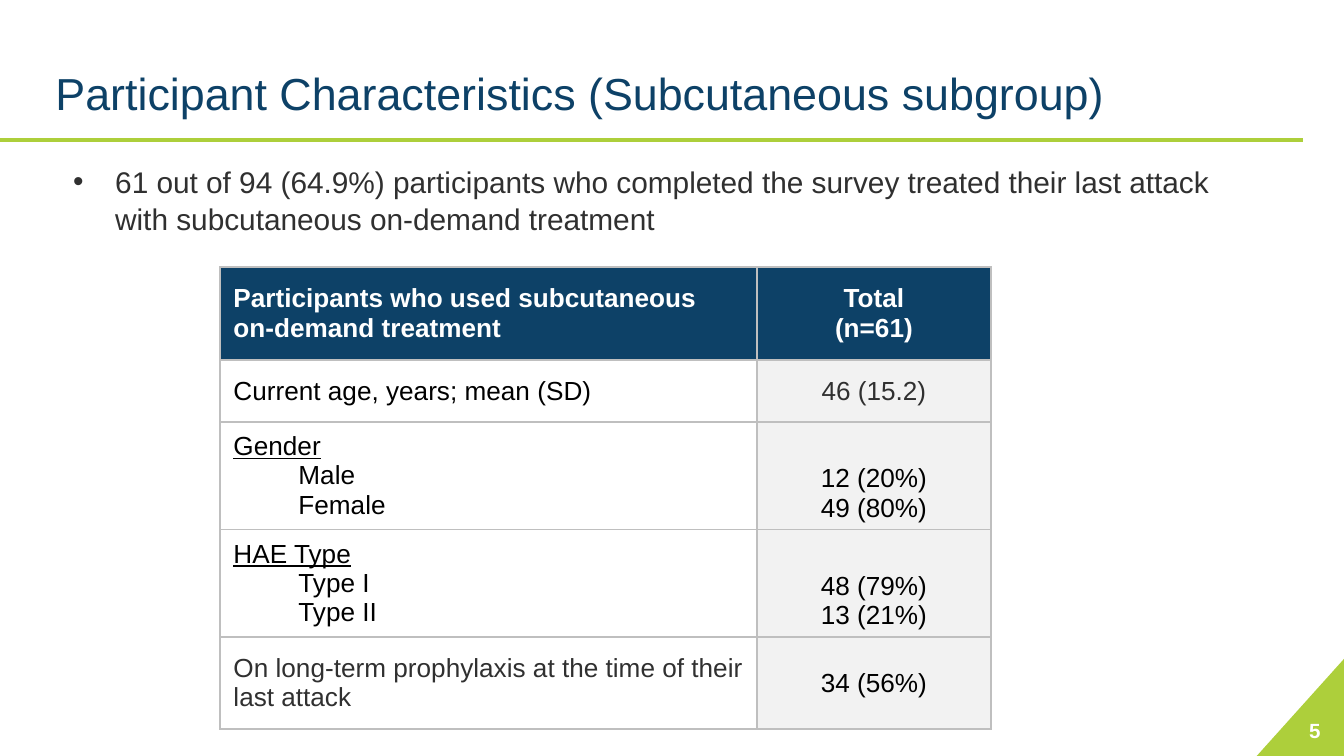
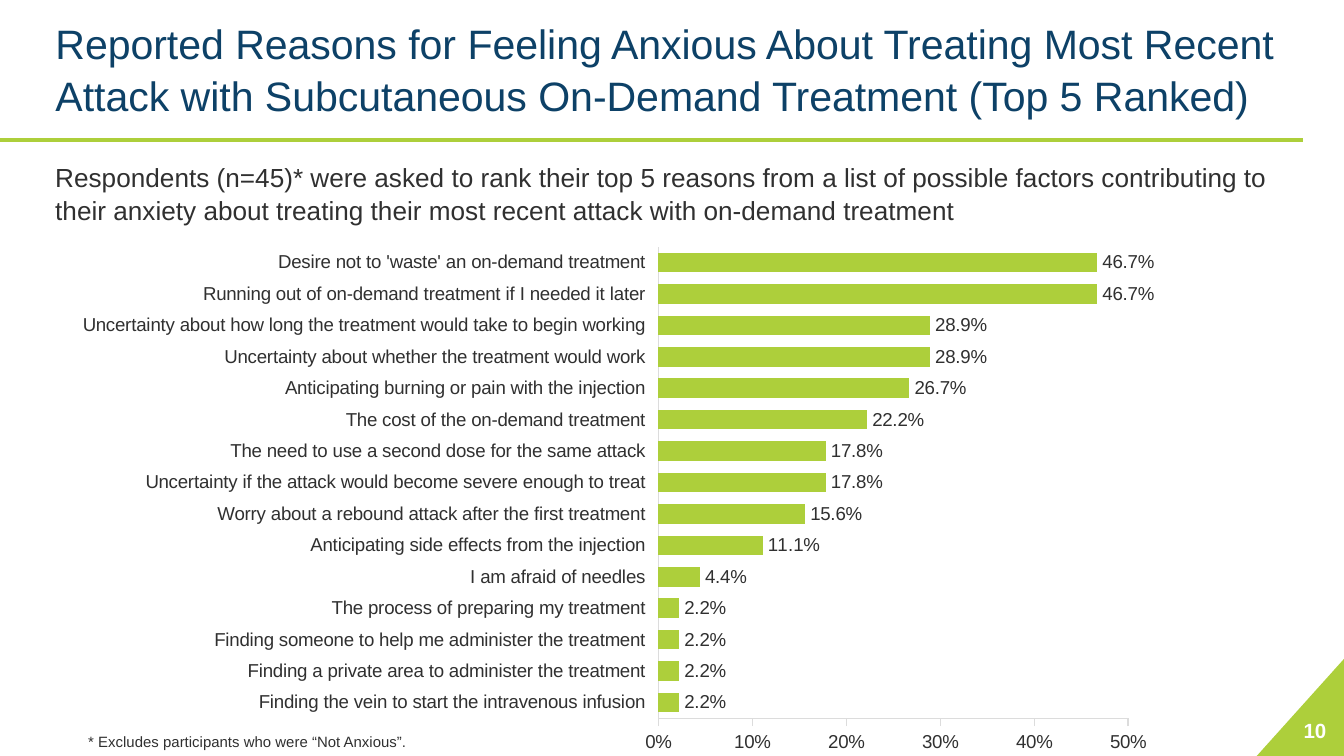
from lxml import etree
from pptx import Presentation
from pptx.chart.data import CategoryChartData
from pptx.dml.color import RGBColor
from pptx.enum import chart as ch, shapes, text
from pptx.oxml import parse_xml
from pptx.oxml.ns import nsdecls, qn

PX = 914400 / 134.4
NAVY, GREEN, INK, BLACK, WHITE = "0D4167", "ADCF3B", "303030", "000000", "FFFFFF"
PALE, BORDER, AXIS = "F2F2F2", "BFBFBF", "DCDCDC"
LEFT, CENTER = text.PP_ALIGN.LEFT, text.PP_ALIGN.CENTER
TOP, MIDDLE, BOTTOM = (text.MSO_ANCHOR.TOP, text.MSO_ANCHOR.MIDDLE,
                       text.MSO_ANCHOR.BOTTOM)
rgb = RGBColor.from_string


def px(*lengths):
    return [round(n * PX) for n in lengths]


def write(tf, lines, size, color, align=LEFT, spacing=1.0, **font):
    """Fill a text frame with one paragraph per line."""
    tf.word_wrap = True
    for i, line in enumerate(lines):
        p = tf.paragraphs[0] if i == 0 else tf.add_paragraph()
        p.text = line
        p.alignment, p.line_spacing = align, spacing
        for r in p.runs:
            r.font.color.rgb = rgb(color)
            for name, value in {"name": "Arial", "size": round(size * 12700), **font}.items():
                setattr(r.font, name, value)


prs = Presentation()
prs.slide_width, prs.slide_height = px(1344, 756)

# Shared frame: title, rule, corner triangle, page number
pages = [
    ("Participant Characteristics (Subcutaneous subgroup)", 24, "5"),
    ("Reported Reasons for Feeling Anxious About Treating Most Recent Attack "
     "with Subcutaneous On-Demand Treatment (Top 5 Ranked)", 22, "10"),
]
slides = []
for title, size, number in pages:
    s = prs.slides.add_slide(prs.slide_layouts[5])
    slides.append(s)

    sp = s.shapes.title
    sp.left, sp.top, sp.width, sp.height = px(42, 27, 1260, 99)
    tf = sp.text_frame
    tf.auto_size, tf.vertical_anchor = text.MSO_AUTO_SIZE.NONE, BOTTOM
    write(tf, [title], size, NAVY, spacing=1.05)

    corner = s.shapes.add_shape(shapes.MSO_SHAPE.RIGHT_TRIANGLE, *px(1250, 664, 99, 89))
    corner.rotation = 270
    corner.shadow.inherit = False
    corner.fill.solid()
    corner.fill.fore_color.rgb = rgb(GREEN)
    corner.line.fill.background()

    rule = s.shapes.add_connector(shapes.MSO_CONNECTOR.STRAIGHT, *px(1303, 140, 0, 140))
    rule.line.color.rgb = rgb(GREEN)
    rule.line.width = 2 * 12700
    etree.SubElement(rule._element.spPr, qn("a:effectLst"))

    tf = s.shapes.add_textbox(*px(1286, 710, 58, 40)).text_frame
    tf.vertical_anchor = MIDDLE
    write(tf, [number], 11, WHITE, CENTER, bold=True)

participants, reasons = slides

# Participants: bullet and table
tf = participants.shapes.add_textbox(*px(60, 155, 1177, 86)).text_frame
write(tf, ["61 out of 94 (64.9%) participants who completed the survey treated "
           "their last attack with subcutaneous on-demand treatment"], 16, INK, spacing=1.05)
pPr = tf.paragraphs[0]._p.get_or_add_pPr()
indent, = px(42)
pPr.set("marL", str(indent))
pPr.set("indent", str(-indent))
etree.SubElement(pPr, qn("a:buFont"), typeface="Arial")
etree.SubElement(pPr, qn("a:buChar"), char="•")

# (label lines, label colour, value lines, value colour, value anchor, row height)
rows = [
    (["Participants who used subcutaneous\von-demand treatment"], WHITE,
     ["Total\v(n=61)"], WHITE, MIDDLE, 93),
    (["Current age, years; mean (SD)"], BLACK, ["46 (15.2)"], INK, MIDDLE, 62),
    (["Gender", "Male", "Female"], BLACK, ["12 (20%)", "49 (80%)"], BLACK, BOTTOM, 102),
    (["HAE Type", "Type I", "Type II"], BLACK, ["48 (79%)", "13 (21%)"], BLACK, BOTTOM, 102),
    (["On long-term prophylaxis at the time of their last attack"], INK,
     ["34 (56%)"], BLACK, MIDDLE, 92),
]
table = participants.shapes.add_table(len(rows), 2, *px(220, 267, 771, 451)).table
table.horz_banding = False
table.columns[0].width, table.columns[1].width = px(537, 234)
for i, (labels, label_color, values, value_color, anchor, height) in enumerate(rows):
    table.rows[i].height, = px(height)
    cells = [(labels, label_color, LEFT, MIDDLE, WHITE),
             (values, value_color, CENTER, anchor, PALE)]
    for j, (lines, color, align, cell_anchor, fill) in enumerate(cells):
        cell = table.cell(i, j)
        write(cell.text_frame, lines, 14, color, align, bold=i == 0)
        cell.vertical_anchor = cell_anchor
        tcPr = cell._tc.get_or_add_tcPr()
        for side in ("lnL", "lnR", "lnT", "lnB"):
            tcPr.append(parse_xml(
                f'<a:{side} {nsdecls("a")} w="12700"><a:solidFill>'
                f'<a:srgbClr val="{BORDER}"/></a:solidFill></a:{side}>'))
        cell.fill.solid()
        cell.fill.fore_color.rgb = rgb(NAVY if i == 0 else fill)
    heading, *members = table.cell(i, 0).text_frame.paragraphs
    if members:
        heading.runs[0].font.underline = True
    for p in members:
        p._p.get_or_add_pPr().set("marL", str(px(65)[0]))

# Reasons: ranked bar chart, listed from the bottom bar up
shares = [
    ("Finding the vein to start the intravenous infusion", 0.022),
    ("Finding a private area to administer the treatment", 0.022),
    ("Finding someone to help me administer the treatment", 0.022),
    ("The process of preparing my treatment", 0.022),
    ("I am afraid of needles", 0.044),
    ("Anticipating side effects from the injection", 0.111),
    ("Worry about a rebound attack after the first treatment", 0.156),
    ("Uncertainty if the attack would become severe enough to treat", 0.178),
    ("The need to use a second dose for the same attack", 0.178),
    ("The cost of the on-demand treatment", 0.222),
    ("Anticipating burning or pain with the injection", 0.267),
    ("Uncertainty about whether the treatment would work", 0.289),
    ("Uncertainty about how long the treatment would take to begin working", 0.289),
    ("Running out of on-demand treatment if I needed it later", 0.467),
    ("Desire not to 'waste' an on-demand treatment", 0.467),
]
data = CategoryChartData(number_format="0.0%")
data.categories = [reason for reason, share in shares]
data.add_series("Series 1", [share for reason, share in shares])
chart = reasons.shapes.add_chart(ch.XL_CHART_TYPE.BAR_CLUSTERED,
                                 *px(-109, 153, 1398, 618), data).chart
chart.has_legend = chart.has_title = False

plot = chart.plots[0]
plot.gap_width, plot.vary_by_categories, plot.has_data_labels = 60, False, True
bars = plot.series[0].format.fill
bars.solid()
bars.fore_color.rgb = rgb(GREEN)
labels, cat, val = plot.data_labels, chart.category_axis, chart.value_axis
formats = [
    (labels, {"show_value": True, "position": ch.XL_LABEL_POSITION.OUTSIDE_END,
              "number_format": "0.0%", "number_format_is_linked": False}),
    (cat, {"tick_label_position": ch.XL_TICK_LABEL_POSITION.LOW,
           "major_tick_mark": ch.XL_TICK_MARK.NONE}),
    (val, {"minimum_scale": 0, "maximum_scale": 0.5, "major_unit": 0.1,
           "has_major_gridlines": False, "major_tick_mark": ch.XL_TICK_MARK.OUTSIDE}),
    (val.tick_labels, {"number_format": "0%", "number_format_is_linked": False}),
]
for target, values in formats:
    for name, value in values.items():
        setattr(target, name, value)
for axis in (cat, val):
    axis.minor_tick_mark = ch.XL_TICK_MARK.NONE
    axis.format.line.color.rgb = rgb(AXIS)
    axis.format.line.width = 9525
for font in (chart.font, labels.font, cat.tick_labels.font, val.tick_labels.font):
    font.name, font.size = "Arial", 10 * 12700
    font.color.rgb = rgb(INK)

area = chart._chartSpace.chart.plotArea
for old in area.findall(qn("c:layout")):
    area.remove(old)
layout = etree.Element(qn("c:layout"))
manual = etree.SubElement(layout, qn("c:manualLayout"))
for tag, value in {"layoutTarget": "inner", "xMode": "edge", "yMode": "edge",
                   "x": 0.549, "y": 0.152, "w": 0.336, "h": 0.763}.items():
    etree.SubElement(manual, qn(f"c:{tag}"), val=str(value))
area.insert(0, layout)

tf = reasons.shapes.add_textbox(*px(42, 153, 1246, 77)).text_frame
write(tf, ["Respondents (n=45)* were asked to rank their top 5 reasons from a list of "
           "possible factors contributing to their anxiety about treating their most "
           "recent attack with on-demand treatment"], 14, INK, spacing=1.05)
tf = reasons.shapes.add_textbox(*px(75, 726, 575, 30)).text_frame
write(tf, ["* Excludes participants who were “Not Anxious”."], 8, INK)

prs.save("out.pptx")
